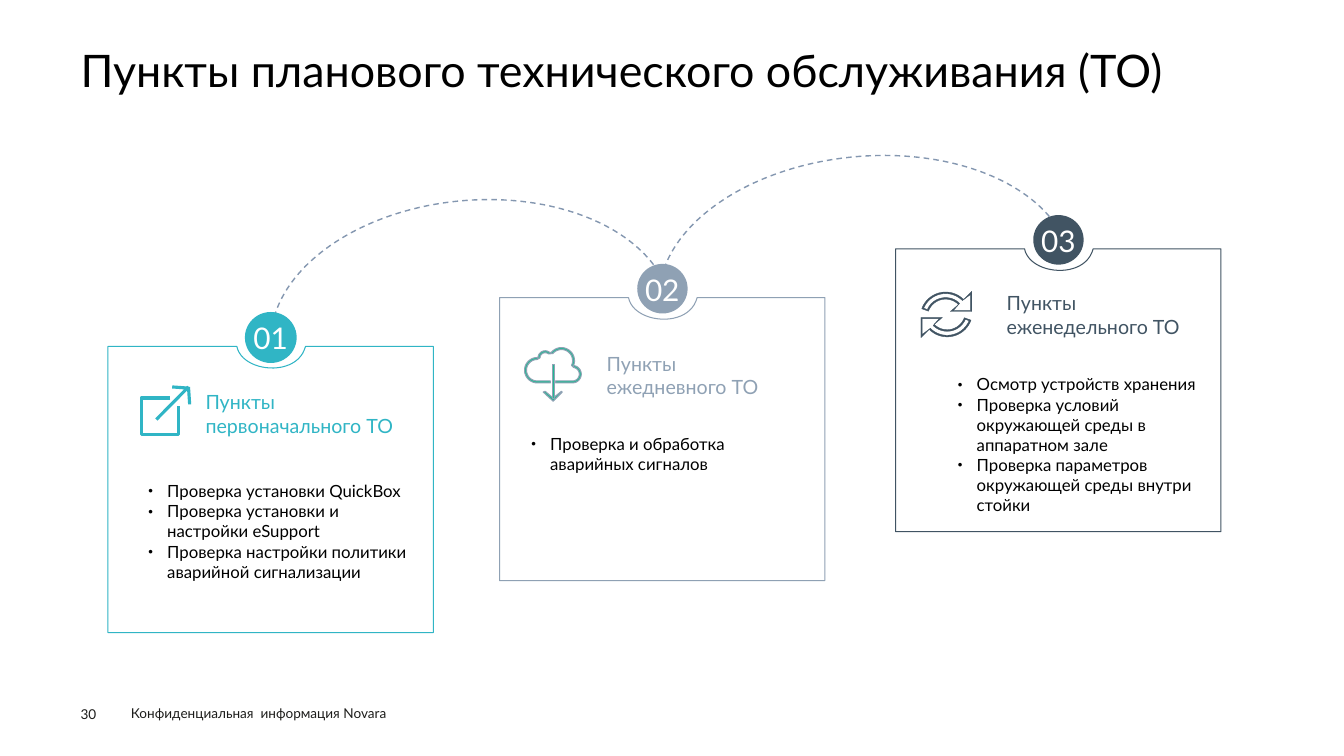
import math
import pptx
import pptx.util
import pptx.dml.color
import pptx.enum.dml
import pptx.enum.shapes
import pptx.enum.text
import pptx.oxml.ns
import lxml.etree

Cm = pptx.util.Cm
Pt = pptx.util.Pt
Kind = pptx.enum.shapes.MSO_SHAPE
Align = pptx.enum.text.PP_ALIGN
rgb = pptx.dml.color.RGBColor.from_string
qn = pptx.oxml.ns.qn

theme = {
    "font": "Lato",
    "teal": rgb("30B5C5"), "steel": rgb("8FA1B4"), "slate": rgb("415463"),
    "arc": rgb("8497B0"), "green": rgb("20BA92"),
    "black": rgb("000000"), "white": rgb("FFFFFF"), "foot": rgb("1D1D1B"),
    "title": 32, "number": 21.3, "head": 14, "body": 12, "small": 9.7,
}

deck = pptx.Presentation()
deck.slide_width = Cm(33.87)
deck.slide_height = Cm(19.05)
slide = deck.slides.add_slide(deck.slide_layouts[4])
shapes = slide.shapes
title, *bodies = slide.placeholders
spare = bodies.pop()
spare.element.getparent().remove(spare.element)


def curve(x, y, r, start, end):
    turns = [math.radians(start + (end - start) * i / 24) for i in range(25)]
    return [(x + r * math.cos(t), y + r * math.sin(t)) for t in turns]


def draw(loops, line, width, fill=None, close=True):
    pen = None
    for loop in loops:
        pts = [(Cm(x), Cm(y)) for x, y in loop]
        if pen is None:
            pen = shapes.build_freeform(*pts[0])
        else:
            pen.move_to(*pts[0])
        pen.add_line_segments(pts[1:], close=close)
    form = pen.convert_to_shape()
    form.shadow.inherit = False
    if fill is None:
        form.fill.background()
    else:
        form.fill.solid()
        form.fill.fore_color.rgb = fill
    form.line.color.rgb = line
    form.line.width = Pt(width)


title.left, title.top, title.width, title.height = Cm(2.03), Cm(1.24), Cm(29.79), Cm(1.37)
frame = title.text_frame
frame.text = "Пункты планового технического обслуживания (ТО)"
frame.margin_left = frame.margin_top = frame.margin_right = frame.margin_bottom = 0
frame.vertical_anchor = pptx.enum.text.MSO_ANCHOR.TOP
frame.auto_size = pptx.enum.text.MSO_AUTO_SIZE.NONE
frame.paragraphs[0].alignment = Align.LEFT
frame.paragraphs[0].line_spacing = 0.9
font = frame.paragraphs[0].runs[0].font
font.name, font.size, font.color.rgb = theme["font"], Pt(theme["title"]), theme["black"]

for x, y, w, end, stop in [
    (6.81, 5.05, 10.16, 111.93, 209.42),
    (16.59, 3.94, 10.44, 112.6, 209.36),
]:
    arc = shapes.add_shape(Kind.ARC, Cm(x), Cm(y), Cm(w), Cm(6.55))
    arc.adjustments[0], arc.adjustments[1] = end, stop
    arc.rotation = 354.6
    arc.shadow.inherit = False
    arc.fill.background()
    arc.line.color.rgb = theme["arc"]
    arc.line.width = Pt(1)
    arc.line.dash_style = pptx.enum.dml.MSO_LINE.DASH

cards = [
    (2.72, 8.73, 7.21, "teal", "Пункты первоначального ТО", (5.18, 9.83, 5.31),
     (3.48, 11.99, 7.34, 4.88),
     ["Проверка установки QuickBox", "Проверка установки и настройки eSupport",
      "Проверка настройки политики аварийной сигнализации"]),
    (12.59, 7.5, 7.13, "steel", "Пункты ежедневного ТО", (15.29, 8.86, 4.85),
     (13.13, 10.8, 7.37, 0.76),
     ["Проверка и обработка аварийных сигналов"]),
    (22.57, 6.27, 7.13, "slate", "Пункты еженедельного ТО", (25.37, 7.34, 5.21),
     (23.88, 9.3, 7.11, 4.11),
     ["Осмотр устройств хранения", "Проверка условий окружающей среды в аппаратном зале",
      "Проверка параметров окружающей среды внутри стойки"]),
]
notch = [(3.25, 0), (3.38, 0.66), (4.78, 0.79), (4.98, 0)]
steps = [i / 24 for i in range(25)]
dip = [
    tuple(sum(math.comb(3, k) * t ** k * (1 - t) ** (3 - k) * notch[k][axis] for k in range(4))
          for axis in (0, 1))
    for t in steps
]
texts = [
    ("30", (2.03, 17.78, 1.4, 0.41), "small", "foot", Align.LEFT, False),
    ("Конфиденциальная  информация Novara", (3.05, 17.65, 9.12, 0.66),
     "small", "foot", Align.LEFT, True),
]
for num, (card, body) in enumerate(zip(cards, bodies), 1):
    x, y, h, hue, head, spot, area, items = card
    tint = theme[hue]
    edge = [(0, 0), *dip, (8.2, 0), (8.2, h), (0, h)]
    draw([[(x + a, y + b) for a, b in edge]], tint, 0.75)
    disc = shapes.add_shape(Kind.OVAL, Cm(x + 3.47), Cm(y - 0.85), Cm(1.27), Cm(1.25))
    disc.shadow.inherit = False
    disc.fill.solid()
    disc.fill.fore_color.rgb = tint
    if num == 1:
        disc.line.color.rgb = tint
        disc.line.width = Pt(1)
    else:
        disc.line.fill.background()
    texts.append((f"{num:02}", (x + 3.2, y - 0.79, 1.8, 1.17),
                  "number", "white", Align.CENTER, True))
    texts.append((head, (*spot, 1.8), "head", hue, Align.LEFT, False))

    body.left, body.top, body.width, body.height = map(Cm, area)
    frame = body.text_frame
    frame.text = "\n".join(items)
    frame.vertical_anchor = pptx.enum.text.MSO_ANCHOR.TOP
    frame.auto_size = pptx.enum.text.MSO_AUTO_SIZE.NONE
    for para in frame.paragraphs:
        para.space_before = Pt(0)
        props = para._p.get_or_add_pPr()
        props.set("marL", str(Cm(0.48)))
        props.set("indent", str(-Cm(0.48)))
        lxml.etree.SubElement(props, qn("a:buSzPct")).set("val", "50000")
        lxml.etree.SubElement(props, qn("a:buChar")).set("char", "●")
        font = para.runs[0].font
        font.name, font.size, font.bold = theme["font"], Pt(theme["body"]), False
        font.color.rgb = theme["black"]

for text, area, size, hue, align, pad in texts:
    frame = shapes.add_textbox(*map(Cm, area)).text_frame
    frame.word_wrap = True
    if not pad:
        frame.margin_left = frame.margin_top = frame.margin_right = frame.margin_bottom = 0
    frame.text = text
    frame.paragraphs[0].alignment = align
    font = frame.paragraphs[0].runs[0].font
    font.name, font.size, font.color.rgb = theme["font"], Pt(theme[size]), theme[hue]

frame_pts = [(4.29, 10.03), (3.56, 10.03), (3.56, 10.95), (4.5, 10.95), (4.5, 10.24)]
draw([frame_pts], theme["teal"], 2.25, close=False)
for ends in [(4.75, 9.75, 4.78, 10.19), (4.34, 9.75, 4.75, 9.78), (3.94, 10.57, 4.75, 9.75)]:
    line = shapes.add_connector(pptx.enum.shapes.MSO_CONNECTOR.STRAIGHT, *map(Cm, ends))
    line.line.color.rgb = theme["teal"]
    line.line.width = Pt(2.25)
    lxml.etree.SubElement(line._element.spPr, qn("a:effectLst"))

puffs = [(14.43, 9.43, 0.22, 90, -80), (14.15, 9.09, 0.33, 25, -140),
         (13.74, 9.02, 0.18, -50, -180), (13.54, 9.33, 0.32, -90, -270)]
rims = []
for inset in (0, 0.05):
    rim = [(14, 9.65 - inset)]
    for x, y, r, start, end in puffs:
        rim += curve(x, y, r - inset, start, end)
    rims.append(rim + [(13.87, 9.65 - inset)])
draw([rims[0] + rims[1][::-1]], theme["steel"], 0.75, theme["green"])
tip = [(13.94, 10.11), (13.69, 9.88), (13.74, 9.86), (13.94, 10.03), (14.15, 9.86), (14.17, 9.88)]
draw([tip], theme["steel"], 0.75, theme["green"])
stem = shapes.add_shape(Kind.RECTANGLE, Cm(13.92), Cm(9.19), Cm(0.05), Cm(0.86))
stem.shadow.inherit = False
stem.fill.solid()
stem.fill.fore_color.rgb = theme["green"]
stem.line.color.rgb = theme["steel"]
stem.line.width = Pt(0.75)

loops = []
for far, near, start, barb in [
    (0.64, 0.46, -160, [(24.49, 7.34), (24.49, 7.85), (23.95, 7.85)]),
    (0.6, 0.5, -157, [(24.46, 7.42), (24.46, 7.82), (24.03, 7.82)]),
]:
    loops.append(curve(23.83, 8, far, start, -45) + barb + curve(23.83, 8, near, -45, start))
draw(loops, theme["slate"], 0.25, theme["slate"])
draw([[(47.7 - x, 15.85 - y) for x, y in loop] for loop in loops],
     theme["slate"], 0.25, theme["slate"])

deck.save("out.pptx")
